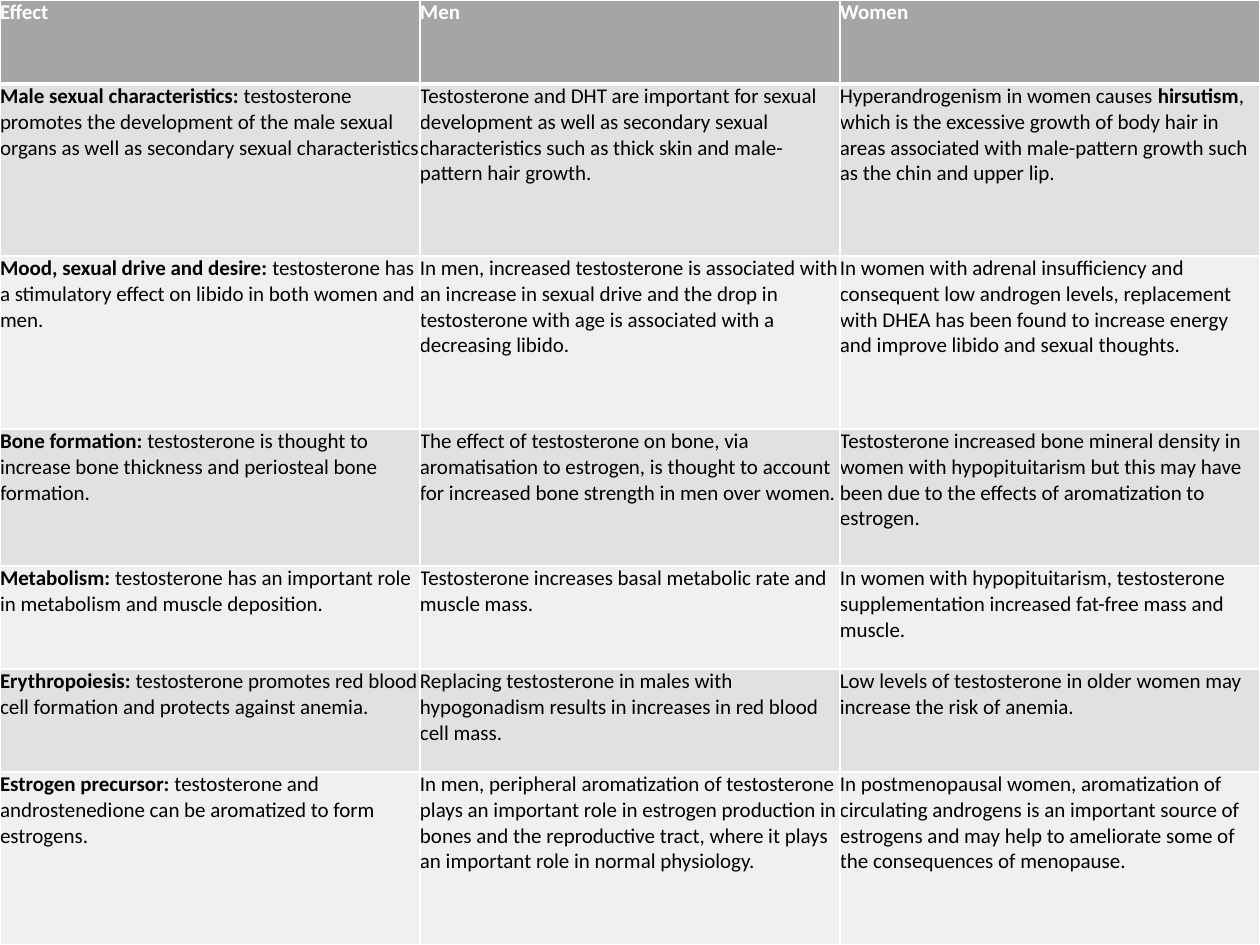
from lxml.etree import SubElement
from pptx import Presentation
from pptx.dml.color import RGBColor
from pptx.oxml.ns import qn
from pptx.util import Pt

PX = 914400 // 126
WIDTH, HEIGHT = 1260, 945
ROW_HEIGHTS = [84, 172, 173, 137, 103, 103, 173]
HEADER_FILL, BAND_FILLS = "A5A5A5", ["F0F0F0", "E1E1E1"]
WHITE, BLACK = "FFFFFF", "000000"

EFFECTS = [
    ["**Effect**", "**Men**", "**Women**"],
    ["**Male sexual characteristics:** testosterone promotes the development of the male "
     "sexual organs as well as secondary sexual characteristics",
     "Testosterone and DHT are important for sexual development as well as secondary sexual "
     "characteristics such as thick skin and male-pattern hair growth.",
     "Hyperandrogenism in women causes **hirsutism**, which is the excessive growth of body "
     "hair in areas associated with male-pattern growth such as the chin and upper lip."],
    ["**Mood, sexual drive and desire: **testosterone has a stimulatory effect on libido in "
     "both women and men.",
     "In men, increased testosterone is associated with an increase in sexual drive and the "
     "drop in testosterone with age is associated with a decreasing libido.",
     "In women with adrenal insufficiency and consequent low androgen levels, replacement "
     "with DHEA has been found to increase energy and improve libido and sexual thoughts."],
    ["**Bone formation: **testosterone is thought to increase bone thickness and periosteal "
     "bone formation.",
     "The effect of testosterone on bone, via aromatisation to estrogen, is thought to "
     "account for increased bone strength in men over women.",
     "Testosterone increased bone mineral density in women with hypopituitarism but this may "
     "have been due to the effects of aromatization to estrogen."],
    ["**Metabolism:** testosterone has an important role in metabolism and muscle deposition.",
     "Testosterone increases basal metabolic rate and muscle mass.",
     "In women with hypopituitarism, testosterone supplementation increased fat-free mass "
     "and muscle."],
    ["**Erythropoiesis:** testosterone promotes red blood cell formation and protects against "
     "anemia.",
     "Replacing testosterone in males with hypogonadism results in increases in red blood "
     "cell mass.",
     "Low levels of testosterone in older women may increase the risk of anemia."],
    ["**Estrogen precursor:** testosterone and androstenedione can be aromatized to form "
     "estrogens.",
     "In men, peripheral aromatization of testosterone plays an important role in estrogen "
     "production in bones and the reproductive tract, where it plays an important role in "
     "normal physiology.",
     "In postmenopausal women, aromatization of circulating androgens is an important source "
     "of estrogens and may help to ameliorate some of the consequences of menopause."],
]


def rgb(value):
    """Turn a hex string into a colour."""
    return RGBColor.from_string(value)


def set_borders(cell, bottom):
    """Draw white cell borders, 1 pt wide except for the bottom one."""
    tc_pr = cell._tc.get_or_add_tcPr()
    for index, side in enumerate("LRTB"):
        width = bottom if side == "B" else 1
        ln = SubElement(tc_pr, qn(f"a:ln{side}"), w=str(Pt(width)))
        fill = SubElement(ln, qn("a:solidFill"))
        SubElement(fill, qn("a:srgbClr"), val=WHITE)
        tc_pr.insert(index, ln)


def write_text(cell, text, color):
    """Write text in which double asterisks switch bold on and off."""
    p = cell.text_frame.paragraphs[0]
    for index, part in enumerate(text.split("**")):
        if part:
            r = p.add_run()
            r.text = part
            r.font.name, r.font.size = "Calibri", Pt(12)
            r.font.bold = index % 2 == 1
            r.font.color.rgb = rgb(color)


def format_cell(cell, fill, bottom):
    """Remove the margins and set the fill and borders."""
    cell.margin_left = cell.margin_right = cell.margin_top = cell.margin_bottom = 0
    cell.fill.solid()
    cell.fill.fore_color.rgb = rgb(fill)
    set_borders(cell, bottom)


def add_effects_table(s):
    """Add the table of testosterone effects over the whole slide."""
    columns = len(EFFECTS[0])
    table = s.shapes.add_table(len(EFFECTS), columns, 0, 0, WIDTH * PX, HEIGHT * PX).table
    for column in table.columns:
        column.width = WIDTH // columns * PX
    for i, texts in enumerate(EFFECTS):
        table.rows[i].height = ROW_HEIGHTS[i] * PX
        header = i == 0
        for j, text in enumerate(texts):
            cell = table.cell(i, j)
            format_cell(cell, HEADER_FILL if header else BAND_FILLS[i % 2], 3 if header else 1)
            write_text(cell, text, WHITE if header else BLACK)


def main():
    """Build and save the slide."""
    prs = Presentation()
    prs.slide_width, prs.slide_height = WIDTH * PX, HEIGHT * PX
    s = prs.slides.add_slide(prs.slide_layouts[6])
    add_effects_table(s)
    prs.save("out.pptx")


if __name__ == "__main__":
    main()
